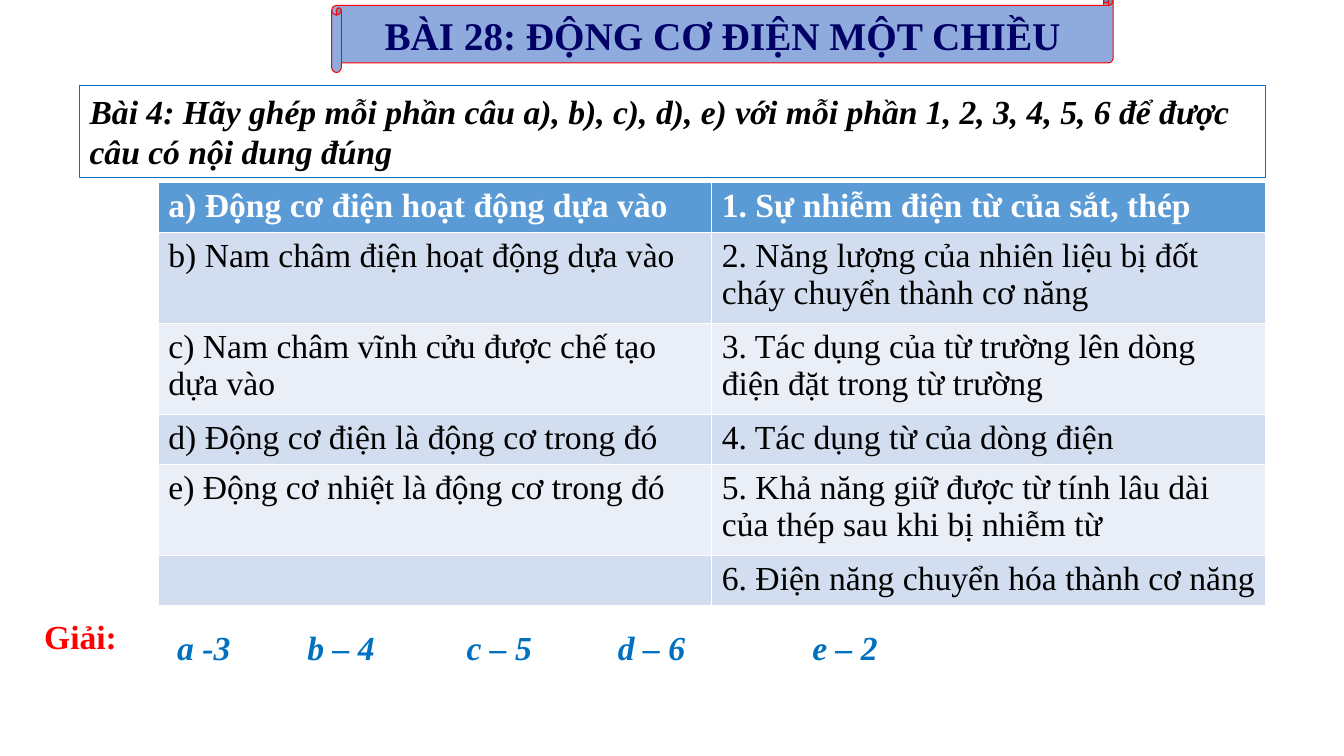
from dataclasses import dataclass

from pptx import Presentation
from pptx.dml.color import RGBColor
from pptx.enum.shapes import MSO_SHAPE
from pptx.enum.text import MSO_ANCHOR, MSO_AUTO_SIZE, PP_ALIGN
from pptx.util import Inches, Pt

RECT, SCROLL = MSO_SHAPE.RECTANGLE, MSO_SHAPE.HORIZONTAL_SCROLL
TOP, MIDDLE = MSO_ANCHOR.TOP, MSO_ANCHOR.MIDDLE
LEFT, CENTER = PP_ALIGN.LEFT, PP_ALIGN.CENTER
FIXED = MSO_AUTO_SIZE.NONE
TITLE_ONLY = 5


@dataclass(frozen=True)
class Theme:
    """Colours and type sizes of the slide."""
    font: str = "Times New Roman"
    head: int = 28
    text: int = 24
    edge: float = 0.75
    black: str = "000000"
    white: str = "FFFFFF"
    navy: str = "000066"
    blue: str = "0070C0"
    red: str = "FF0000"
    scroll: str = "8FAADC"
    top: str = "5B9BD5"
    bands: tuple = ("EAEFF7", "D2DEEF")


THEME = Theme()
PAIRS = [
    ("a) Động cơ điện hoạt động dựa vào", "1. Sự nhiễm điện từ của sắt, thép"),
    ("b) Nam châm điện hoạt động dựa vào",
     "2. Năng lượng của nhiên liệu bị đốt cháy chuyển thành cơ năng"),
    ("c) Nam châm vĩnh cửu được chế tạo dựa vào",
     "3. Tác dụng của từ trường lên dòng điện đặt trong từ trường"),
    ("d) Động cơ điện là động cơ trong đó", "4. Tác dụng từ của dòng điện"),
    ("e) Động cơ nhiệt là động cơ trong đó",
     "5. Khả năng giữ được từ tính lâu dài của thép sau khi bị nhiễm từ"),
    ("", "6. Điện năng chuyển hóa thành cơ năng"),
]
HEIGHTS = (0.5, 0.9, 0.9, 0.5, 0.9, 0.5)
KEYS = [("a -3", 1.66), ("b – 4", 2.95), ("c – 5", 4.53),
        ("d – 6", 6.03), ("e – 2", 7.96)]


def tint(color):
    """Turn a hex string into a colour."""
    return RGBColor.from_string(color)


def write(frame, text, color, size=THEME.text, align=LEFT, anchor=TOP, **style):
    """Put one styled paragraph into a text frame."""
    frame.word_wrap = True
    frame.vertical_anchor = anchor
    para = frame.paragraphs[0]
    para.alignment = align
    run = para.add_run()
    run.text = text
    look = {"name": THEME.font, "size": Pt(size), **style}
    for key, value in look.items():
        setattr(run.font, key, value)
    run.font.color.rgb = tint(color)


def panel(slide, kind, box, line, fill=None):
    """Add an outlined shape, filled or clear."""
    shape = slide.shapes.add_shape(kind, *map(Inches, box))
    shape.shadow.inherit = False
    shape.line.color.rgb = tint(line)
    shape.line.width = Pt(THEME.edge)
    if fill:
        shape.fill.solid()
        shape.fill.fore_color.rgb = tint(fill)
    else:
        shape.fill.background()
    return shape


def label(slide, text, box, color, **style):
    """Add a bold text box."""
    frame = slide.shapes.add_textbox(*map(Inches, box)).text_frame
    write(frame, text, color, bold=True, **style)


def banner(slide, text):
    """Set the title on a scroll."""
    panel(slide, SCROLL, (3.29, -0.04, 7.75, 0.76), THEME.red, THEME.scroll)
    title = slide.shapes.title
    spot = {"left": 3.29, "top": 0, "width": 7.75, "height": 0.7}
    for key, value in spot.items():
        setattr(title, key, Inches(value))
    write(title.text_frame, text, THEME.navy, THEME.head, CENTER, MIDDLE, bold=True)
    title.text_frame.auto_size = FIXED
    slide.shapes.element.append(title.element)


def grid(slide, rows, box):
    """Add the table of sentence halves."""
    table = slide.shapes.add_table(len(rows), 2, *map(Inches, box)).table
    for i, (row, high) in enumerate(zip(rows, HEIGHTS)):
        table.rows[i].height = Inches(high)
        fill = THEME.bands[i % 2] if i else THEME.top
        color = THEME.black if i else THEME.white
        for j, text in enumerate(row):
            cell = table.cell(i, j)
            cell.fill.solid()
            cell.fill.fore_color.rgb = tint(fill)
            write(cell.text_frame, text, color, bold=not i)


def main():
    """Build the slide and save it."""
    deck = Presentation()
    deck.slide_width, deck.slide_height = Inches(13.33), Inches(7.5)
    slide = deck.slides.add_slide(deck.slide_layouts[TITLE_ONLY])
    banner(slide, "BÀI 28: ĐỘNG CƠ ĐIỆN MỘT CHIỀU")
    task = panel(slide, RECT, (0.79, 0.85, 11.76, 0.91), THEME.blue)
    write(task.text_frame, "Bài 4: Hãy ghép mỗi phần câu a), b), c), d), e) với mỗi "
          "phần 1, 2, 3, 4, 5, 6 để được câu có nội dung đúng",
          THEME.black, bold=True, italic=True)
    grid(slide, PAIRS, (1.57, 1.81, 10.98, sum(HEIGHTS)))
    label(slide, "Giải:", (0.34, 6.06, 1.23, 0.5), THEME.red, anchor=MIDDLE)
    for text, left in KEYS:
        label(slide, text, (left, 6.17, 1.26, 0.5), THEME.blue, italic=True)
    deck.save("out.pptx")


if __name__ == "__main__":
    main()
